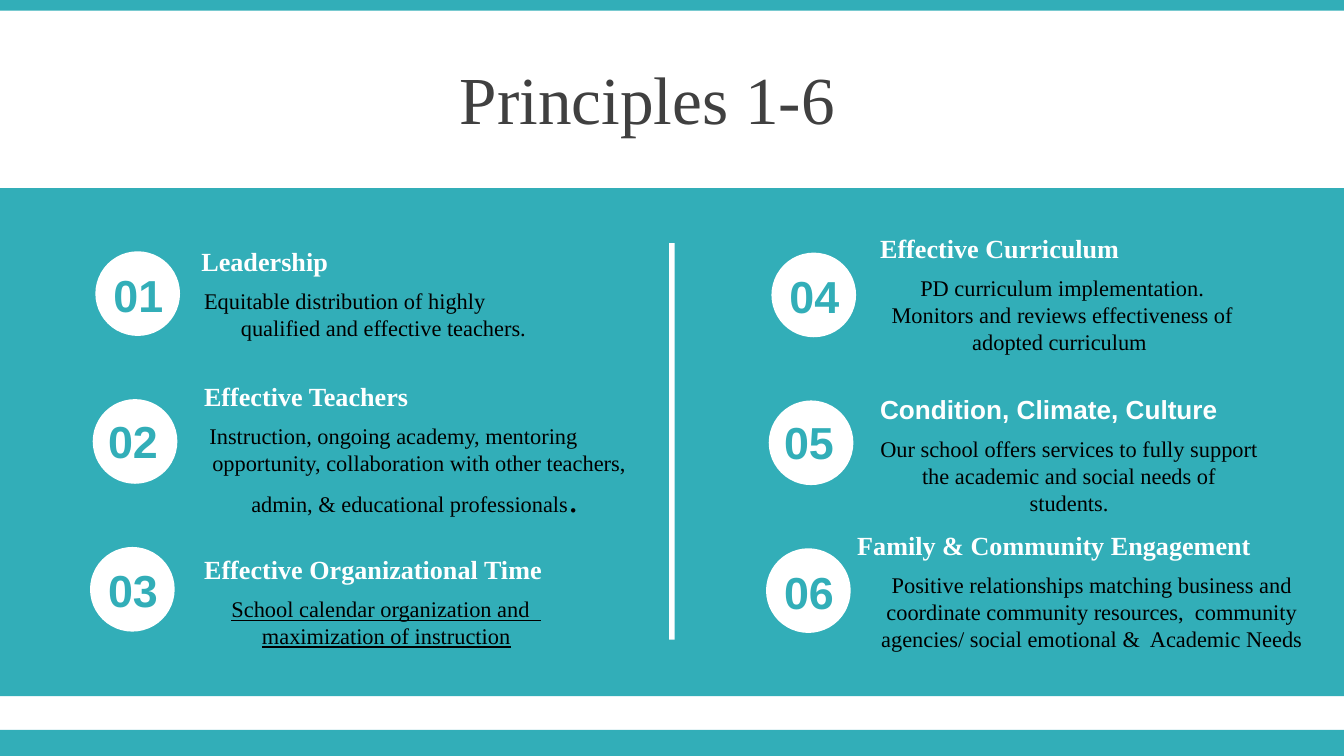
import pptx
import pptx.dml.color
import pptx.enum.shapes
import pptx.enum.text
import pptx.util

Inches, Pt = pptx.util.Inches, pptx.util.Pt
RGBColor = pptx.dml.color.RGBColor
SHAPE = pptx.enum.shapes.MSO_SHAPE
AUTO_SIZE = pptx.enum.text.MSO_AUTO_SIZE
LEFT, CENTER = pptx.enum.text.PP_ALIGN.LEFT, pptx.enum.text.PP_ALIGN.CENTER

TEAL = RGBColor(0x32, 0xAE, 0xB8)
WHITE = RGBColor(0xFF, 0xFF, 0xFF)
BLACK = RGBColor(0, 0, 0)
GRAY = RGBColor(0x40, 0x40, 0x40)
SERIF, SANS = "Times New Roman", "Arial"

WIDTH = 10
HEIGHT = WIDTH * 9 / 16
COLUMN_LEFTS = (0.71, 5.74)  # first circle of each column
ROW_TOP, ROW_STEP, ROW_SHIFT = 1.87, 1.1, -0.02
CIRCLE = 0.63
BODY_DROP = 0.31  # from heading top to body top

deck = pptx.Presentation()
deck.slide_width, deck.slide_height = Inches(WIDTH), Inches(HEIGHT)
page = deck.slides.add_slide(deck.slide_layouts[5])


def add_block(kind, left, top, width, height, color):
    block = page.shapes.add_shape(
        kind, Inches(left), Inches(top), Inches(width), Inches(height))
    block.shadow.inherit = False
    block.fill.solid()
    block.fill.fore_color.rgb = color
    block.line.fill.background()


def add_text(box, paragraphs, color, font=SERIF, bold=None, underline=None):
    """Fill a box with (alignment, indent, [(text, size), ...]) paragraphs."""
    frame = box.text_frame
    frame.word_wrap = True
    for index, (alignment, indent, runs) in enumerate(paragraphs):
        para = frame.add_paragraph() if index else frame.paragraphs[0]
        para.alignment = alignment
        if indent:
            para._p.get_or_add_pPr().set("marL", str(Inches(indent)))
        for text, size in runs:
            span = para.add_run()
            span.text = text
            span.font.name, span.font.size = font, Pt(size)
            span.font.bold, span.font.underline = bold, underline
            span.font.color.rgb = color


# Bands, panel and divider
for left, top, width, height, color in (
    (0, 5.43, WIDTH, HEIGHT - 5.43, TEAL),
    (0, 0, WIDTH, 0.08, TEAL),
    (0, 1.4, WIDTH, 3.78, TEAL),
    (4.98, 1.81, 0.04, 2.95, WHITE),
):
    add_block(SHAPE.RECTANGLE, left, top, width, height, color)

# Title
title = page.shapes.title
title.left, title.top = Inches(-0.12), Inches(0.41)
title.width, title.height = Inches(WIDTH), Inches(0.63)
title.text_frame.vertical_anchor = pptx.enum.text.MSO_ANCHOR.MIDDLE
add_text(title, [(CENTER, 0, [("Principles 1-6 ", 36)])], GRAY)

# Numbered circles, column by column
for index in range(6):
    column, row = divmod(index, 3)
    left = COLUMN_LEFTS[column] + row * ROW_SHIFT
    top = ROW_TOP + row * ROW_STEP + column * 0.01
    add_block(SHAPE.OVAL, left, top, CIRCLE, CIRCLE, WHITE)
    nudge = 0.05 if row == 1 else 0.03
    drop = 0.06 if row == 1 else 0.07
    number = page.shapes.add_textbox(
        Inches(left - nudge), Inches(top + drop), Inches(0.7), Inches(0.5))
    number.text_frame.auto_size = AUTO_SIZE.SHAPE_TO_FIT_TEXT
    add_text(number, [(CENTER, 0, [(f"0{index + 1}", 24)])], TEAL, SANS, True)

# heading, font, heading left, body left, top, width, body height, underline, body
principles = (
    ("Leadership", SERIF, 1.4, 1.4, 1.78, 2.91, 0.5, None, [
        (LEFT, 0.02, [("Equitable distribution of highly", 12)]),
        (CENTER, 0, [("qualified and effective teachers.", 12)])]),
    ("Effective Teachers", SERIF, 1.42, 1.42, 2.78, 3.4, 0.84, None, [
        (LEFT, 0.04, [("Instruction, ongoing academy, mentoring", 12)]),
        (CENTER, 0, [("opportunity, collaboration with other teachers, "
                      "admin, & educational professionals", 12), (". ", 20)])]),
    ("Effective Organizational Time", SERIF, 1.42, 1.42, 4.07, 2.91, 0.5, True, [
        (CENTER, 0, [("School calendar organization and   "
                      "maximization of instruction", 12)])]),
    ("Effective Curriculum", SERIF, 6.45, 6.45, 1.68, 2.91, 0.71, None, [
        (CENTER, 0, [("PD curriculum implementation.", 12)]),
        (CENTER, 0, [("Monitors and reviews effectiveness of "
                      "adopted curriculum ", 12)])]),
    ("Condition, Climate, Culture", SANS, 6.45, 6.45, 2.88, 3.01, 0.5, None, [
        (CENTER, 0, [("Our school offers services to fully support "
                      "the academic and social needs of students.", 12)])]),
    ("Family & Community Engagement", SERIF, 6.28, 6.45, 3.89, 3.35, 0.71, None, [
        (CENTER, 0, [("Positive relationships matching business and "
                      "coordinate community resources,  community "
                      "agencies/ social emotional &  Academic Needs", 12)])]),
)
for (heading, font, heading_left, body_left, top, width, height,
     underline, paragraphs) in principles:
    body = page.shapes.add_textbox(
        Inches(body_left), Inches(top + BODY_DROP), Inches(width), Inches(height))
    body.text_frame.auto_size = AUTO_SIZE.SHAPE_TO_FIT_TEXT
    add_text(body, paragraphs, BLACK, underline=underline)
    label = page.shapes.add_textbox(
        Inches(heading_left), Inches(top),
        Inches(width + body_left - heading_left), Inches(0.34))
    label.text_frame.auto_size = AUTO_SIZE.SHAPE_TO_FIT_TEXT
    add_text(label, [(LEFT, 0, [(heading, 14)])], WHITE, font, True)

deck.save("out.pptx")
